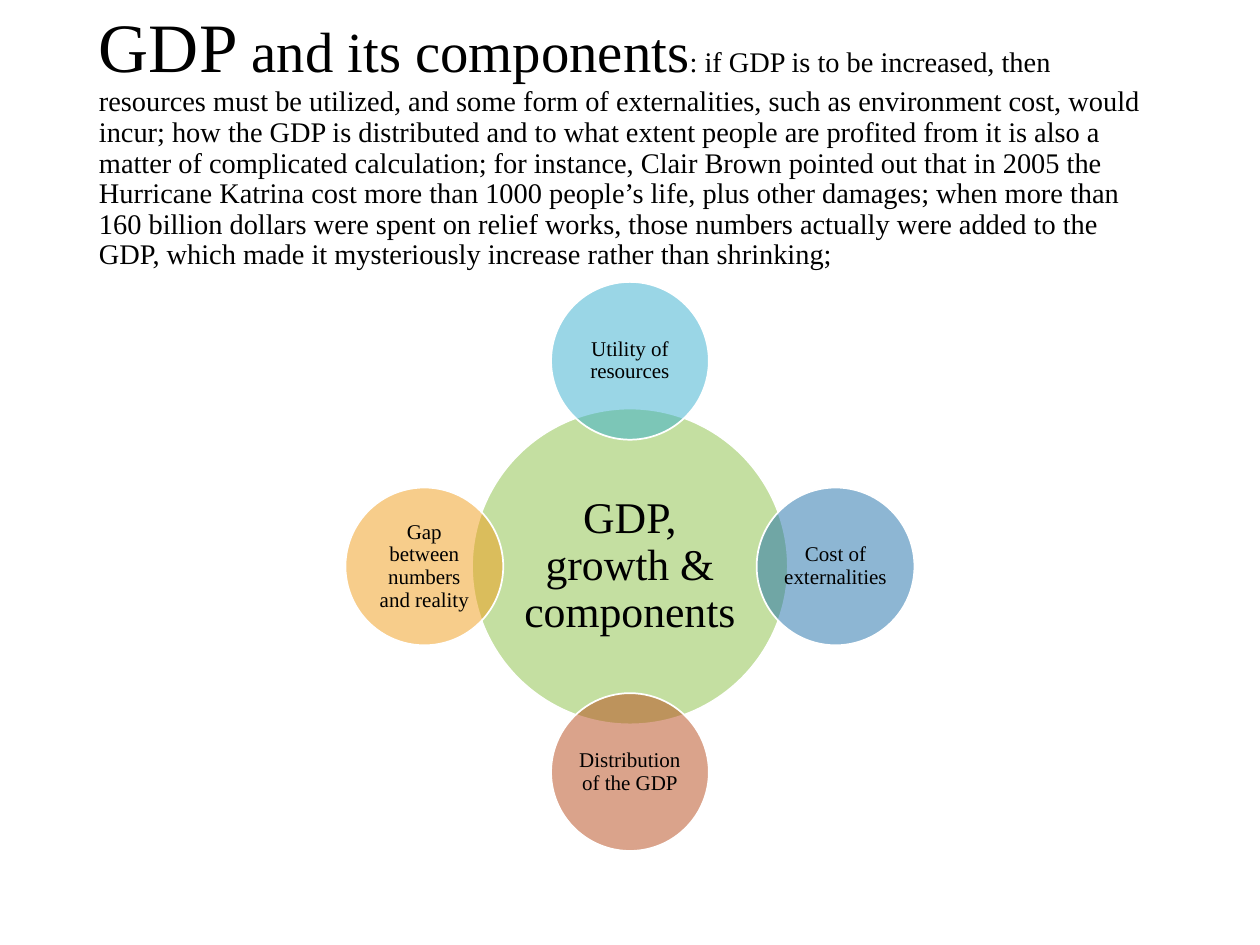
import pptx
import pptx.dml.color
import pptx.enum.shapes
import pptx.enum.text
import pptx.oxml.ns
import pptx.util
from lxml import etree

Pt = pptx.util.Pt
RGBColor = pptx.dml.color.RGBColor

FONT = "Times New Roman"
BLACK = RGBColor(0x00, 0x00, 0x00)
WHITE = RGBColor(0xFF, 0xFF, 0xFF)
GREEN = RGBColor(0x8B, 0xC1, 0x45)
CYAN = RGBColor(0x36, 0xAF, 0xCE)
BLUE = RGBColor(0x1D, 0x6F, 0xA9)
RUST = RGBColor(0xB7, 0x49, 0x19)
ORANGE = RGBColor(0xF1, 0x9D, 0x19)

TITLE_RUNS = [
    ("GDP", 39.6),
    (" and its components", 32.4),
    (": if GDP is to be increased, then resources must be utilized, and some form of "
     "externalities, such as environment cost, would incur; how the GDP is distributed "
     "and to what extent people are profited from it is also a matter of complicated "
     "calculation; for instance, Clair Brown pointed out that in 2005 the Hurricane "
     "Katrina cost more than 1000 people’s life, plus other damages; when more than "
     "160 billion dollars were spent on relief works, those numbers actually were added "
     "to the GDP, which made it mysteriously increase rather than shrinking;", 16.2),
]
HUB_TEXT = "GDP, growth & components"
# Text, colour, and direction from the hub (right, down)
COMPONENTS = [
    ("Utility of resources", CYAN, (0, -1)),
    ("Cost of externalities", BLUE, (1, 0)),
    ("Distribution of the GDP", RUST, (0, 1)),
    ("Gap between numbers and reality", ORANGE, (-1, 0)),
]

CENTER_X, CENTER_Y = 360, 323.7
HUB_DIAMETER = 180.5
COMPONENT_DIAMETER = 90.2
ORBIT_RADIUS = 117.5


def set_frame(text_frame, margins):
    text_frame.word_wrap = True
    text_frame.auto_size = pptx.enum.text.MSO_AUTO_SIZE.NONE
    text_frame.vertical_anchor = pptx.enum.text.MSO_ANCHOR.MIDDLE
    text_frame.margin_left = text_frame.margin_right = Pt(margins[0])
    text_frame.margin_top = text_frame.margin_bottom = Pt(margins[1])
    text_frame.paragraphs[0].line_spacing = 0.9


def format_run(run, size):
    run.font.name = FONT
    run.font.size = Pt(size)
    run.font.color.rgb = BLACK


def add_title(slide):
    title = slide.shapes.add_textbox(Pt(49.5), Pt(28.8), Pt(621), Pt(104.4))
    set_frame(title.text_frame, (7.2, 3.6))
    for text, size in TITLE_RUNS:
        run = title.text_frame.paragraphs[0].add_run()
        run.text = text
        format_run(run, size)


def add_circle(slide, text, color, center_x, center_y, diameter, size, margin):
    """Add a half-transparent circle around a centre point."""
    circle = slide.shapes.add_shape(
        pptx.enum.shapes.MSO_SHAPE.OVAL,
        Pt(center_x - diameter / 2), Pt(center_y - diameter / 2),
        Pt(diameter), Pt(diameter))
    circle.shadow.inherit = False
    circle.fill.solid()
    circle.fill.fore_color.rgb = color
    color_element = circle.fill._xPr.find(".//" + pptx.oxml.ns.qn("a:srgbClr"))
    etree.SubElement(color_element, pptx.oxml.ns.qn("a:alpha"), val="50000")
    circle.line.color.rgb = WHITE
    circle.line.width = Pt(1)

    circle.text_frame.text = text
    set_frame(circle.text_frame, (margin, margin))
    paragraph = circle.text_frame.paragraphs[0]
    paragraph.alignment = pptx.enum.text.PP_ALIGN.CENTER
    format_run(paragraph.runs[0], size)


def main():
    presentation = pptx.Presentation()
    presentation.slide_width, presentation.slide_height = Pt(720), Pt(540)
    slide = presentation.slides.add_slide(presentation.slide_layouts[6])
    add_title(slide)
    add_circle(slide, HUB_TEXT, GREEN, CENTER_X, CENTER_Y, HUB_DIAMETER, 25, 2.5)
    for text, color, (right, down) in COMPONENTS:
        add_circle(slide, text, color,
                   CENTER_X + right * ORBIT_RADIUS, CENTER_Y + down * ORBIT_RADIUS,
                   COMPONENT_DIAMETER, 12, 1.2)
    presentation.save("out.pptx")


if __name__ == "__main__":
    main()
